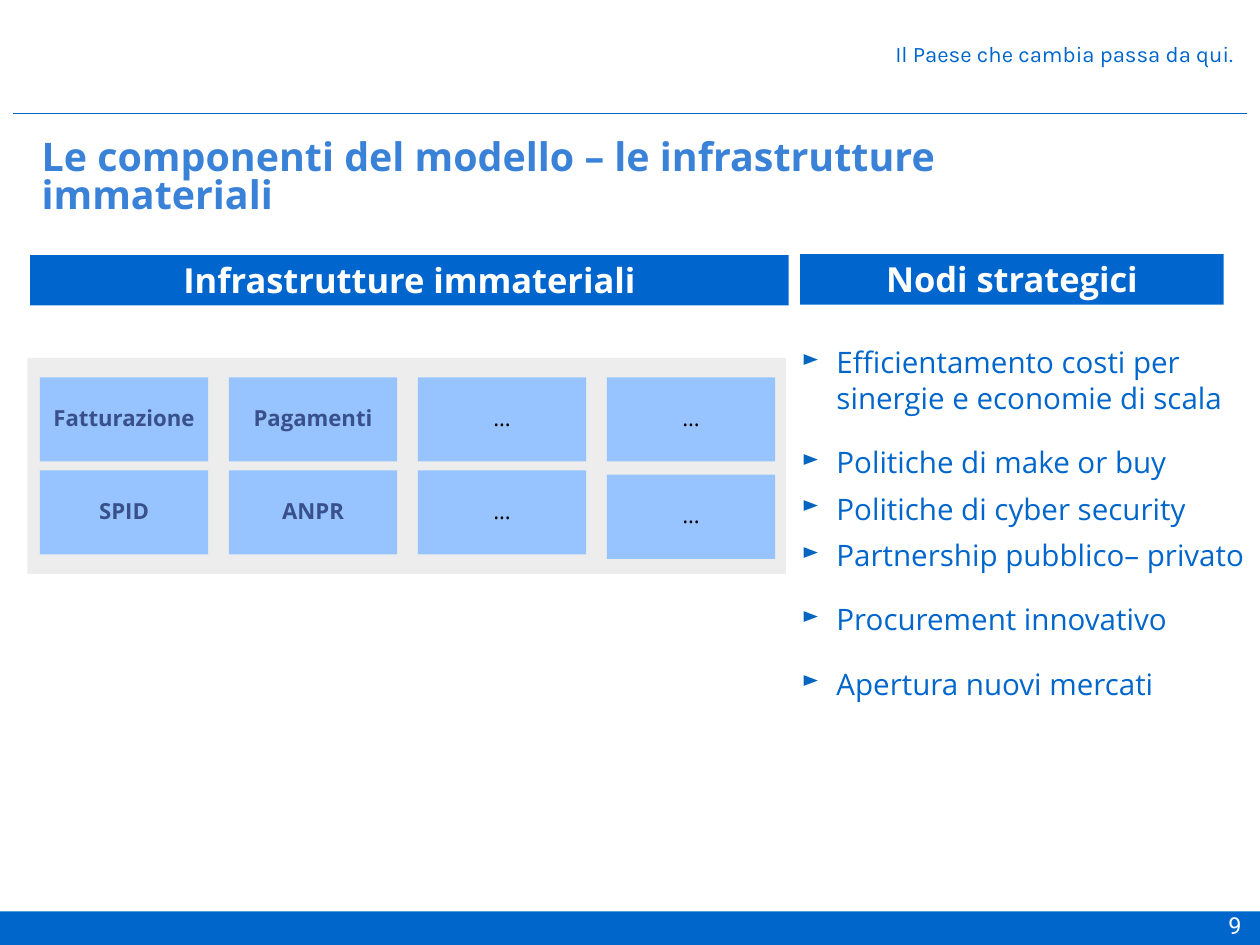
from dataclasses import dataclass

from lxml import etree
from pptx import Presentation
from pptx import util as u
from pptx.dml.color import RGBColor
from pptx.enum import shapes, text
from pptx.oxml import ns


@dataclass(frozen=True)
class Theme:
    brand: str = "0066CC"
    banner: str = "0066CE"
    title: str = "3982D8"
    bullet: str = "0365C0"
    panel: str = "EDEDED"
    tile: str = "97C4FF"
    tile_text: str = "39508A"
    white: str = "FFFFFF"
    black: str = "000000"
    body_font: str = "Open Sans"
    motto_font: str = "Karla"
    number_font: str = "Roboto"
    title_size: int = 32
    banner_size: int = 28
    list_size: int = 24
    number_size: int = 19
    small_size: int = 18


THEME = Theme()
ALIGN = text.PP_ALIGN
ANCHOR = text.MSO_ANCHOR


def write(para, words, size, color, font=THEME.body_font, bold=False,
          align=ALIGN.LEFT, spacing=None):
    para.alignment = align
    if spacing:
        para.line_spacing = spacing
    span = para.add_run()
    span.text = words
    span.font.name = font
    span.font.size = u.Pt(size)
    span.font.bold = bold
    span.font.color.rgb = RGBColor.from_string(color)


def add_bullet(para, mark, color, percent, indent):
    props = para._p.get_or_add_pPr()
    props.set("marL", str(u.Inches(indent)))
    props.set("indent", str(-u.Inches(indent)))
    tint = etree.SubElement(props, ns.qn("a:buClr"))
    etree.SubElement(tint, ns.qn("a:srgbClr"), val=color)
    etree.SubElement(props, ns.qn("a:buSzPct"), val=str(percent * 1000))
    etree.SubElement(props, ns.qn("a:buChar"), char=mark)


class SlideBuilder:
    def __init__(self, page, theme):
        self.page = page
        self.theme = theme

    def frame(self, box, insets, anchor, wrap):
        """Set the margins (left, top, right, bottom), anchor and wrapping of a box."""
        frame = box.text_frame
        (frame.margin_left, frame.margin_top,
         frame.margin_right, frame.margin_bottom) = map(u.Inches, insets)
        frame.vertical_anchor = anchor
        frame.word_wrap = wrap
        return frame

    def rect(self, area, fill):
        box = self.page.shapes.add_shape(
            shapes.MSO_SHAPE.RECTANGLE, *map(u.Inches, area))
        box.shadow.inherit = False
        box.fill.solid()
        box.fill.fore_color.rgb = RGBColor.from_string(fill)
        box.line.fill.background()
        return box

    def rule(self, left, right, top):
        line = self.page.shapes.add_connector(
            shapes.MSO_CONNECTOR.STRAIGHT,
            *map(u.Inches, (left, top, right, top)))
        line.line.color.rgb = RGBColor.from_string(self.theme.brand)
        line.line.width = u.Pt(1)
        etree.SubElement(line._element.spPr, ns.qn("a:effectLst"))

    def text_box(self, area, inset, anchor=ANCHOR.TOP, wrap=True):
        box = self.page.shapes.add_textbox(*map(u.Inches, area))
        return self.frame(box, [inset] * 4, anchor, wrap)

    def label(self, words, area, inset, anchor=ANCHOR.TOP, wrap=True, **style):
        frame = self.text_box(area, inset, anchor, wrap)
        write(frame.paragraphs[0], words, **style)

    def banner(self, words, area):
        box = self.rect(area, self.theme.banner)
        frame = self.frame(box, (0.1, 0.05, 0.1, 0.05), ANCHOR.TOP, True)
        write(frame.paragraphs[0], words, self.theme.banner_size,
              self.theme.white, bold=True, align=ALIGN.CENTER)

    def tile(self, words, area):
        box = self.rect(area, self.theme.tile)
        frame = self.frame(box, (0.1, 0.06, 0.1, 0.05), ANCHOR.MIDDLE, False)
        named = words != "…"
        color = self.theme.tile_text if named else self.theme.black
        write(frame.paragraphs[0], words, self.theme.small_size, color,
              bold=named, align=ALIGN.CENTER, spacing=0.8)

    def bullet_list(self, items, area):
        """Write (words, line spacing) pairs as a bulleted list."""
        frame = self.text_box(area, 0.05)
        for index, (words, spacing) in enumerate(items):
            para = frame.add_paragraph() if index else frame.paragraphs[0]
            para.space_before = u.Pt(9 if index else 0)
            para.line_spacing = spacing
            add_bullet(para, "►", self.theme.bullet, 75, 0.39)
            write(para, words, self.theme.list_size, self.theme.brand)


STRATEGIC_NODES = [
    ("Efficientamento costi per sinergie e economie di scala", 1.0),
    ("Politiche di make or buy", 1.5),
    ("Politiche di cyber security", 1.0),
    ("Partnership pubblico– privato", 1.0),
    ("Procurement innovativo", 1.5),
    ("Apertura nuovi mercati", 1.5),
]
INFRASTRUCTURES = [
    ["Fatturazione", "Pagamenti", "…", "…"],
    ["SPID", "ANPR", "…", "…"],
]


def main():
    deck = Presentation()
    deck.slide_width, deck.slide_height = u.Inches(14.22), u.Inches(10.67)
    page = deck.slides.add_slide(deck.slide_layouts[6])
    build = SlideBuilder(page, THEME)

    build.rect((-0.03, 10.29, 14.29, 0.38), THEME.brand)
    build.rule(0.15, 14.07, 1.28)
    build.label("Il Paese che cambia passa da qui.", (10.04, 0.39, 3.94, 0.44),
                0.06, ANCHOR.MIDDLE, wrap=False, size=THEME.small_size,
                color=THEME.brand, font=THEME.motto_font, align=ALIGN.RIGHT)
    build.label("9", (12.01, 10.29, 2, 0.4), 0, size=THEME.number_size,
                color=THEME.white, font=THEME.number_font, align=ALIGN.RIGHT)
    build.label("Le componenti del modello – le infrastrutture immateriali",
                (0.42, 1.55, 12.13, 0.91), 0.05, size=THEME.title_size,
                color=THEME.title, bold=True, spacing=0.8)

    build.bullet_list(STRATEGIC_NODES, (9, 3.84, 5.22, 4.29))
    build.banner("Nodi strategici", (9.03, 2.87, 4.78, 0.57))
    build.banner("Infrastrutture immateriali", (0.34, 2.88, 8.56, 0.57))

    build.rect((0.31, 4.04, 8.56, 2.44), THEME.panel)
    for row, names in enumerate(INFRASTRUCTURES):
        for column, name in enumerate(names):
            # The last tile sits slightly lower than its row.
            drop = 0.05 if (row, column) == (1, 3) else 0
            build.tile(name, (0.45 + 2.133 * column,
                              4.26 + 1.05 * row + drop, 1.9, 0.95))

    deck.save("out.pptx")


if __name__ == "__main__":
    main()
